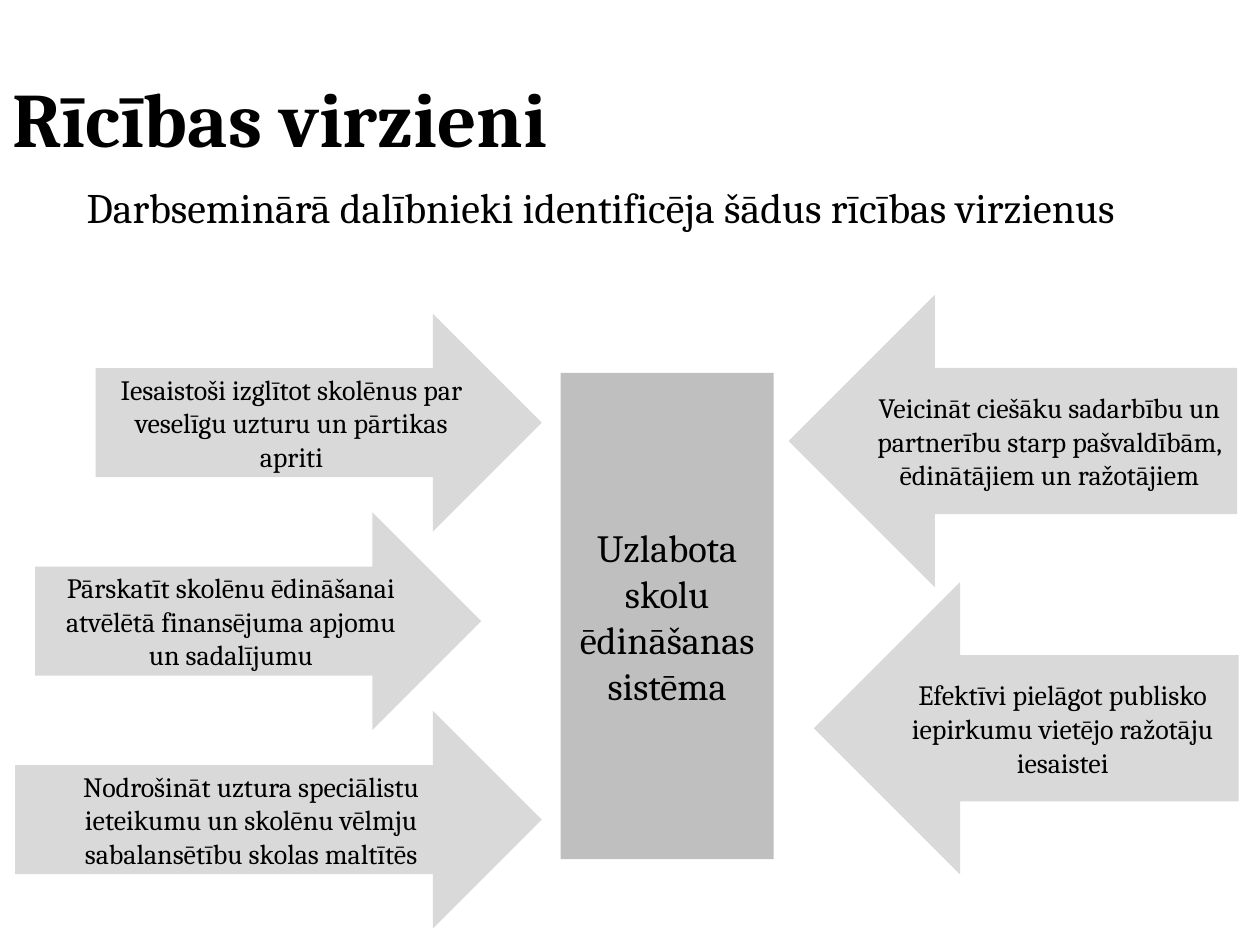
from dataclasses import dataclass

from pptx import Presentation
from pptx.dml.color import RGBColor
from pptx.enum.shapes import MSO_SHAPE
from pptx.enum.text import MSO_ANCHOR, MSO_AUTO_SIZE, PP_ALIGN
from pptx.util import Inches, Pt

RECTANGLE = MSO_SHAPE.RECTANGLE
RIGHT_ARROW, LEFT_ARROW = MSO_SHAPE.RIGHT_ARROW, MSO_SHAPE.LEFT_ARROW
LEFT, CENTER = PP_ALIGN.LEFT, PP_ALIGN.CENTER
TOP, MIDDLE = MSO_ANCHOR.TOP, MSO_ANCHOR.MIDDLE
NO_FIT = MSO_AUTO_SIZE.NONE
TITLE_ONLY = 5
PAGE_WIDTH, PAGE_HEIGHT = 10, 7.5


@dataclass(frozen=True)
class Theme:
    font: str = "Cambria"
    ink: str = "000000"
    arrow: str = "D9D9D9"
    goal: str = "BFBFBF"
    title_size: int = 44
    lead_size: int = 24
    goal_size: int = 22
    arrow_size: int = 16


THEME = Theme()

# Arrows on the left: horizontal extent and text, in evenly stepped rows
LEFT_TOP, LEFT_STEP, LEFT_HEIGHT = 2.49, 1.575, 1.73
LEFT_ACTIONS = [
    (0.76, 4.3, "Iesaistoši izglītot skolēnus par veselīgu uzturu un pārtikas apriti"),
    (0.28, 3.82, "Pārskatīt skolēnu ēdināšanai atvēlētā finansējuma apjomu un sadalījumu"),
    (0.12, 4.3, "Nodrošināt uztura speciālistu ieteikumu un skolēnu vēlmju "
                "sabalansētību skolas maltītēs"),
]

# Arrows on the right
RIGHT_TOP, RIGHT_STEP, RIGHT_HEIGHT = 2.34, 2.28, 2.32
RIGHT_ACTIONS = [
    (6.26, 9.82, "Veicināt ciešāku sadarbību un partnerību starp pašvaldībām, "
                 "ēdinātājiem un ražotājiem"),
    (6.46, 9.83, "Efektīvi pielāgot publisko iepirkumu vietējo ražotāju iesaistei"),
]


def write(shape, text, size, align=CENTER, anchor=MIDDLE, bold=False):
    """Fill a shape's text frame with one formatted paragraph."""
    frame = shape.text_frame
    frame.word_wrap = True
    frame.auto_size = NO_FIT
    frame.vertical_anchor = anchor
    para = frame.paragraphs[0]
    para.alignment = align
    span = para.add_run()
    span.text = text
    span.font.name = THEME.font
    span.font.size = Pt(size)
    span.font.bold = bold
    span.font.color.rgb = RGBColor.from_string(THEME.ink)


def add_title(page, text):
    title = page.shapes.title
    title.left, title.top = 0, Inches(0.04 * PAGE_HEIGHT)
    title.width, title.height = Inches(PAGE_WIDTH), Inches(PAGE_HEIGHT / 6)
    write(title, text, THEME.title_size, align=LEFT, bold=True)


def add_lead(page, text):
    box = page.shapes.add_textbox(*map(Inches, (0.59, 1.39, 8.43, 0.91)))
    write(box, text, THEME.lead_size, align=LEFT, anchor=TOP)


def add_block(page, kind, area, text, fill, size):
    """Add a flat, borderless shape with centred text."""
    block = page.shapes.add_shape(kind, *map(Inches, area))
    block.shadow.inherit = False
    block.fill.solid()
    block.fill.fore_color.rgb = RGBColor.from_string(fill)
    block.line.fill.background()
    write(block, text, size)


def add_arrows(page, kind, actions, top, step, height):
    """Stack arrows downwards at an even step."""
    for row, (start, end, text) in enumerate(actions):
        area = (start, top + row * step, end - start, height)
        add_block(page, kind, area, text, THEME.arrow, THEME.arrow_size)


def main():
    deck = Presentation()
    deck.slide_width, deck.slide_height = Inches(PAGE_WIDTH), Inches(PAGE_HEIGHT)
    page = deck.slides.add_slide(deck.slide_layouts[TITLE_ONLY])

    # Heading
    add_title(page, "Rīcības virzieni")
    add_lead(page, "Darbseminārā dalībnieki identificēja šādus rīcības virzienus")

    # Goal in the centre, with actions pointing at it from both sides
    add_block(page, RECTANGLE, (4.45, 2.96, 1.69, 3.86),
              "Uzlabota skolu ēdināšanas sistēma", THEME.goal, THEME.goal_size)
    add_arrows(page, RIGHT_ARROW, LEFT_ACTIONS, LEFT_TOP, LEFT_STEP, LEFT_HEIGHT)
    add_arrows(page, LEFT_ARROW, RIGHT_ACTIONS, RIGHT_TOP, RIGHT_STEP, RIGHT_HEIGHT)

    deck.save("out.pptx")


if __name__ == "__main__":
    main()
